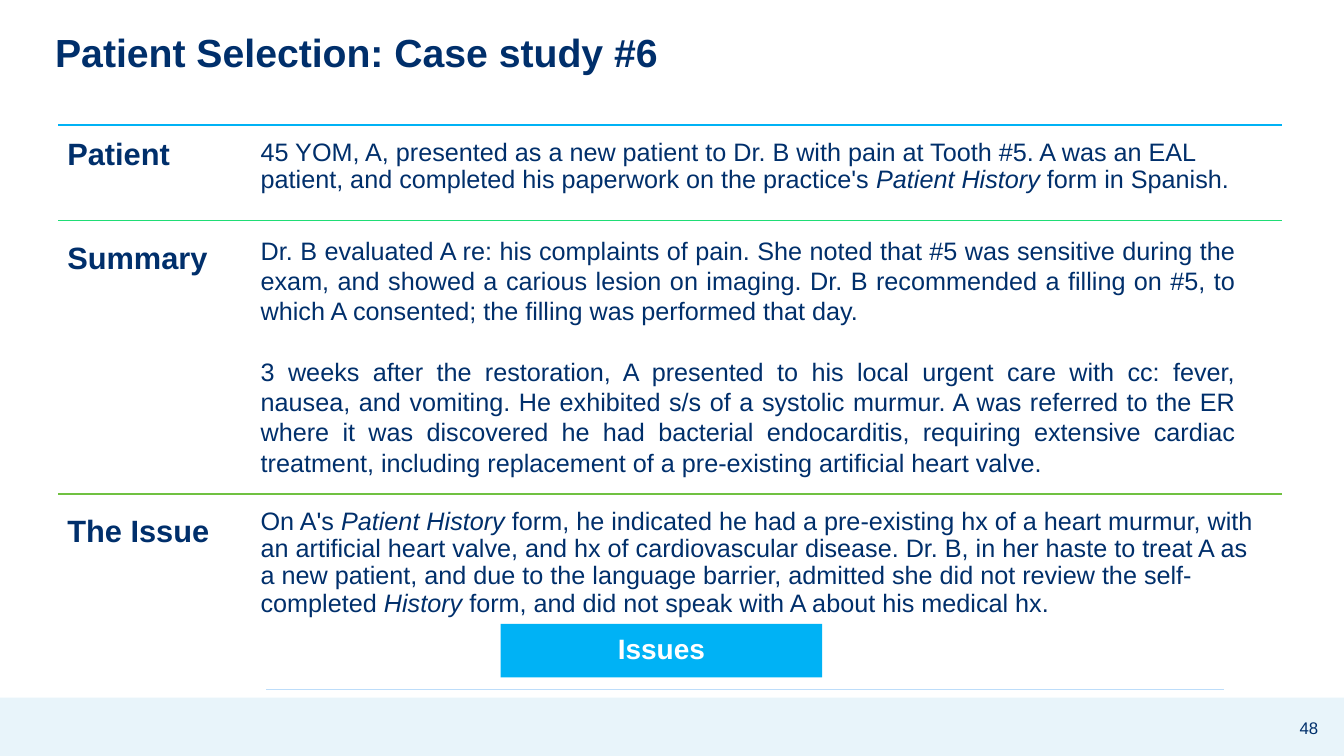
import dataclasses

import lxml.etree
import pptx
import pptx.dml.color
import pptx.enum.shapes
import pptx.enum.text
import pptx.oxml.ns
import pptx.util

Cm = pptx.util.Cm
Pt = pptx.util.Pt
Align = pptx.enum.text.PP_ALIGN
Anchor = pptx.enum.text.MSO_ANCHOR


@dataclasses.dataclass(frozen=True)
class Theme:
    """Colours, typeface and type sizes of the slide."""
    font: str = "Arial"
    navy: str = "002F6B"
    white: str = "FFFFFF"
    sky: str = "00B2F5"
    green: str = "1FDD75"
    leaf: str = "70C141"
    pale: str = "BDDDFA"
    band: str = "E8F4FA"
    title: int = 28
    label: int = 22
    button: int = 20
    body: int = 18
    number: int = 12


THEME = Theme()

PATIENT = [[
    ("45 YOM, A, presented as a new patient to Dr. B with pain at Tooth #5. A was an EAL "
     "patient, and completed his paperwork on the practice's ", False),
    ("Patient History", True),
    (" form in Spanish.", False),
]]
SUMMARY = [
    [("Dr. B evaluated A re: his complaints of pain. She noted that #5 was sensitive during "
      "the exam, and showed a carious lesion on imaging. Dr. B recommended a filling on #5, "
      "to which A consented; the filling was performed that day.", False)],
    [("3 weeks after the restoration, A presented to his local urgent care with cc: fever, "
      "nausea, and vomiting. He exhibited s/s of a systolic murmur. A was referred to the ER "
      "where it was discovered he had bacterial endocarditis, requiring extensive cardiac "
      "treatment, including replacement of a pre-existing artificial heart valve.", False)],
]
ISSUE = [[
    ("On A's ", False),
    ("Patient History", True),
    (" form, he indicated he had a pre-existing hx of a heart murmur, with an artificial "
     "heart valve, and hx of cardiovascular disease. Dr. B, in her haste to treat A as a new "
     "patient, and due to the language barrier, admitted she did not review the "
     "self-completed ", False),
    ("History", True),
    (" form, and did not speak with A about his medical hx.", False),
]]


def rgb(value):
    """Turn a hex string into a colour."""
    return pptx.dml.color.RGBColor.from_string(value)


def write(frame, paragraphs, size, color=THEME.navy, bold=False, align=Align.LEFT,
          spacing=0.9, gap=0, anchor=Anchor.TOP, inset=(0.25, 0.13)):
    """Fill a text frame with paragraphs of (text, italic) runs."""
    frame.word_wrap = True
    frame.auto_size = pptx.enum.text.MSO_AUTO_SIZE.NONE
    frame.vertical_anchor = anchor
    frame.margin_left = frame.margin_right = Cm(inset[0])
    frame.margin_top = frame.margin_bottom = Cm(inset[1])
    for index, pieces in enumerate(paragraphs):
        paragraph = frame.add_paragraph() if index else frame.paragraphs[0]
        paragraph.alignment = align
        paragraph.line_spacing = spacing
        paragraph.space_before = Pt(gap if index else 0)
        for text, italic in pieces:
            run = paragraph.add_run()
            run.text = text
            run.font.name = THEME.font
            run.font.size = Pt(size)
            run.font.bold = bold
            run.font.italic = italic
            run.font.color.rgb = rgb(color)


def add_text(slide, box, paragraphs, size, **style):
    """Place a text box given in centimetres."""
    write(slide.shapes.add_textbox(*map(Cm, box)).text_frame, paragraphs, size, **style)


def add_block(slide, box, color):
    """Place a plain filled rectangle and return it."""
    block = slide.shapes.add_shape(pptx.enum.shapes.MSO_SHAPE.RECTANGLE, *map(Cm, box))
    block.shadow.inherit = False
    block.fill.solid()
    block.fill.fore_color.rgb = rgb(color)
    block.line.fill.background()
    return block


def add_rule(slide, left, top, width, color):
    """Draw a thin horizontal rule."""
    rule = slide.shapes.add_connector(pptx.enum.shapes.MSO_CONNECTOR.STRAIGHT,
                                      Cm(left), Cm(top), Cm(left + width), Cm(top))
    rule.line.color.rgb = rgb(color)
    rule.line.width = Pt(1)
    lxml.etree.SubElement(rule._element.spPr, pptx.oxml.ns.qn("a:effectLst"))


def add_title(slide, box):
    """Place the slide title in its placeholder."""
    title = slide.shapes.title
    title.left, title.top, title.width, title.height = map(Cm, box)
    write(title.text_frame, [[("Patient Selection: Case study #6", False)]], THEME.title,
          bold=True, anchor=Anchor.MIDDLE)


def add_case_row(slide, box, color, label, label_drop, account, account_width, **style):
    """Build one ruled row with its label on the left and its account on the right."""
    left, top, width, height = box
    add_rule(slide, left, top, width, color)
    add_text(slide, (left, top + label_drop, 5.05, 1.52), [[(label, False)]], THEME.label,
             bold=True, inset=(0.23, 0.23))
    add_text(slide, (left + 4.85, top + 0.24, account_width, height - 0.24), account,
             THEME.body, **style)


def add_issues_button(slide, box):
    """Build the highlighted Issues block."""
    button = add_block(slide, box, THEME.sky)
    write(button.text_frame, [[("Issues", False)]], THEME.button, color=THEME.white,
          bold=True, align=Align.CENTER, anchor=Anchor.MIDDLE, inset=(0.41, 0.23))


def add_footer(slide, box):
    """Build the footer band with the slide number at its right end."""
    left, top, width, height = box
    add_block(slide, box, THEME.band)
    add_text(slide, (left + width - 1.66, top + 0.25, 1.55, 1.02), [[("48", False)]],
             THEME.number, align=Align.CENTER, spacing=1.0, anchor=Anchor.MIDDLE)


def main():
    """Build and save the case study slide."""
    deck = pptx.Presentation()
    deck.slide_width, deck.slide_height = Cm(33.87), Cm(19.05)
    slide = deck.slides.add_slide(deck.slide_layouts[5])
    add_footer(slide, (0, 17.58, 33.87, 1.47))
    add_title(slide, (1.14, 0.38, 30.71, 1.98))
    add_case_row(slide, (1.47, 3.15, 30.84, 2.41), THEME.sky, "Patient", 0.13,
                 PATIENT, 25.07)
    add_case_row(slide, (1.47, 5.56, 30.84, 6.89), THEME.green, "Summary", 0.33,
                 SUMMARY, 25.07, align=Align.JUSTIFY, spacing=1.0, gap=21.6)
    add_case_row(slide, (1.47, 12.45, 30.84, 3.27), THEME.leaf, "The Issue", 0.33,
                 ISSUE, 25.55)
    add_rule(slide, 6.71, 17.37, 24.13, THEME.pale)
    add_issues_button(slide, (12.62, 15.72, 8.1, 1.35))
    deck.save("out.pptx")


if __name__ == "__main__":
    main()
